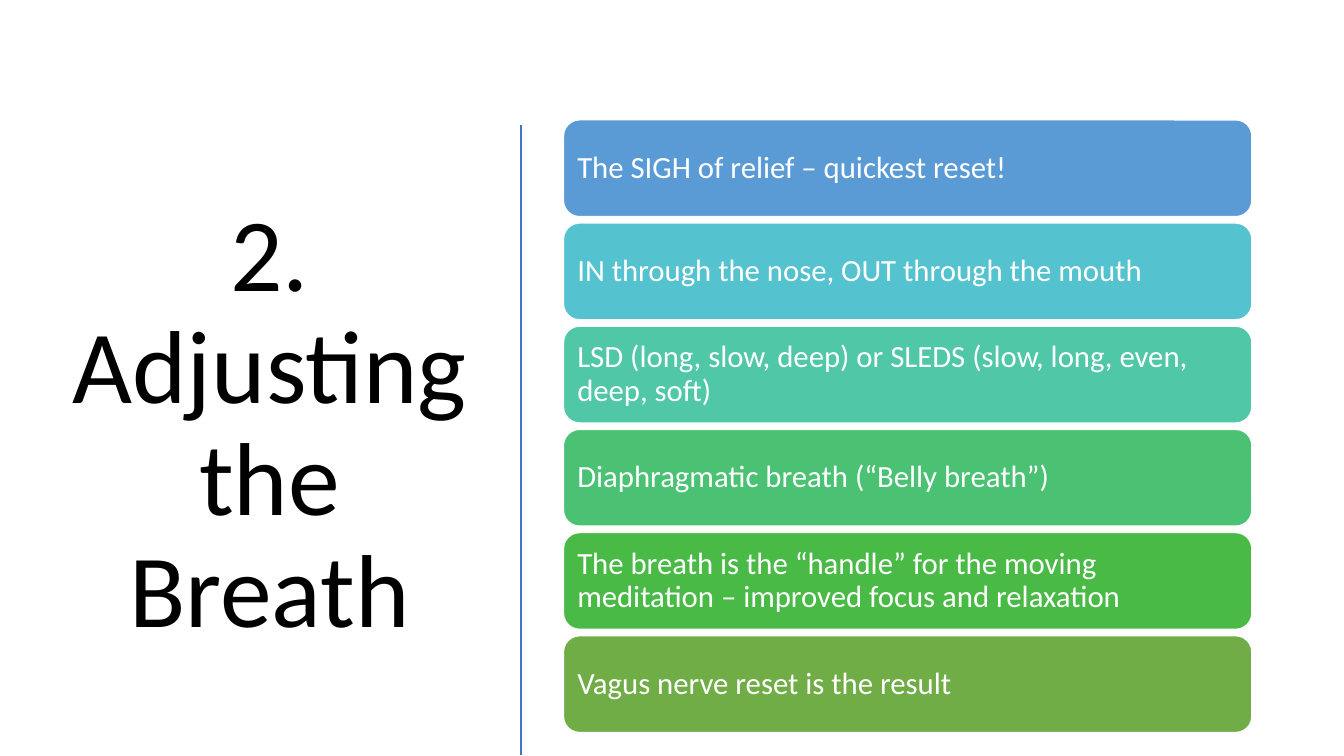
from lxml import etree
from pptx import Presentation
from pptx.dml.color import RGBColor
from pptx.enum.shapes import MSO_CONNECTOR, MSO_SHAPE
from pptx.enum.text import MSO_ANCHOR, MSO_AUTO_SIZE, PP_ALIGN
from pptx.oxml.ns import qn
from pptx.util import Cm, Pt

STRAIGHT = MSO_CONNECTOR.STRAIGHT
ROUNDED = MSO_SHAPE.ROUNDED_RECTANGLE
MIDDLE = MSO_ANCHOR.MIDDLE
NO_AUTOFIT = MSO_AUTO_SIZE.NONE
LEFT, CENTER = PP_ALIGN.LEFT, PP_ALIGN.CENTER
TITLE_ONLY = 5

COLORS = {
    "title": "000000",
    "divider": "4472C4",
    "white": "FFFFFF",
    "blue": "5B9BD5",
    "cyan": "55C3CF",
    "teal": "50C8A7",
    "mint": "4BC174",
    "green": "4ABA46",
    "olive": "70AD47",
}

BREATH_TIPS = [
    ("The SIGH of relief – quickest reset!", "blue"),
    ("IN through the nose, OUT through the mouth", "cyan"),
    ("LSD (long, slow, deep) or SLEDS (slow, long, even, deep, soft)", "teal"),
    ("Diaphragmatic breath (“Belly breath”)", "mint"),
    ("The breath is the “handle” for the moving meditation – "
     "improved focus and relaxation", "green"),
    ("Vagus nerve reset is the result", "olive"),
]
BAR_TOP, BAR_PITCH = 3.02, 2.6


class SlideBuilder:
    font_name = "Calibri"

    def __init__(self, slide):
        self.slide = slide

    def color(self, key):
        return RGBColor.from_string(COLORS[key])

    def set_text(self, frame, text, size, color, align):
        frame.word_wrap = True
        frame.auto_size = NO_AUTOFIT
        frame.vertical_anchor = MIDDLE
        frame.text = text
        for paragraph in frame.paragraphs:
            paragraph.alignment = align
            paragraph.line_spacing = 0.9
            paragraph.font.name = self.font_name
            paragraph.font.size = Pt(size)
            paragraph.font.color.rgb = self.color(color)

    def title(self, text, left, top, width, height):
        heading = self.slide.shapes.title
        heading.left, heading.top = Cm(left), Cm(top)
        heading.width, heading.height = Cm(width), Cm(height)
        self.set_text(heading.text_frame, text, 74, "title", CENTER)

    def divider(self, x, top, bottom):
        line = self.slide.shapes.add_connector(
            STRAIGHT, Cm(x), Cm(top), Cm(x), Cm(bottom))
        line.line.color.rgb = self.color("divider")
        line.line.width = Pt(2)
        etree.SubElement(line._element.spPr, qn("a:effectLst"))

    def bar(self, text, fill, left, top, width, height):
        bar = self.slide.shapes.add_shape(
            ROUNDED, Cm(left), Cm(top), Cm(width), Cm(height))
        bar.shadow.inherit = False
        bar.fill.solid()
        bar.fill.fore_color.rgb = self.color(fill)
        bar.line.color.rgb = self.color("white")
        bar.line.width = Pt(1)
        frame = bar.text_frame
        frame.margin_left = frame.margin_right = Cm(0.23)
        frame.margin_top = frame.margin_bottom = Cm(0.23)
        self.set_text(frame, text, 22, "white", LEFT)


def main():
    deck = Presentation()
    deck.slide_width, deck.slide_height = Cm(33.87), Cm(19.05)
    builder = SlideBuilder(
        deck.slides.add_slide(deck.slide_layouts[TITLE_ONLY]))

    # Heading and divider
    builder.title("2.\vAdjusting the Breath", 1.32, 2.97, 10.95, 15.52)
    builder.divider(13.13, 3.15, 19.02)

    # Stack of breathing tips
    for row, (tip, fill) in enumerate(BREATH_TIPS):
        builder.bar(tip, fill, 14.2, BAR_TOP + row * BAR_PITCH, 17.35, 2.44)

    deck.save("out.pptx")


if __name__ == "__main__":
    main()
